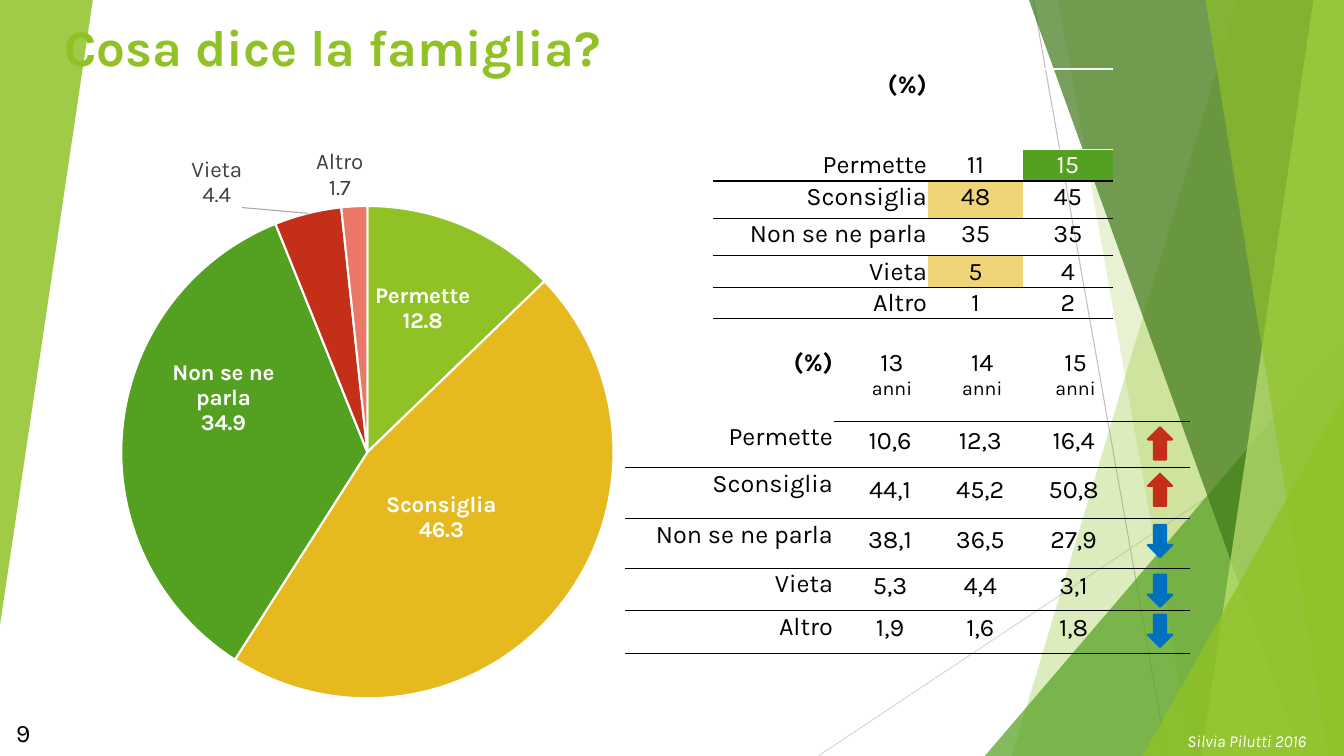
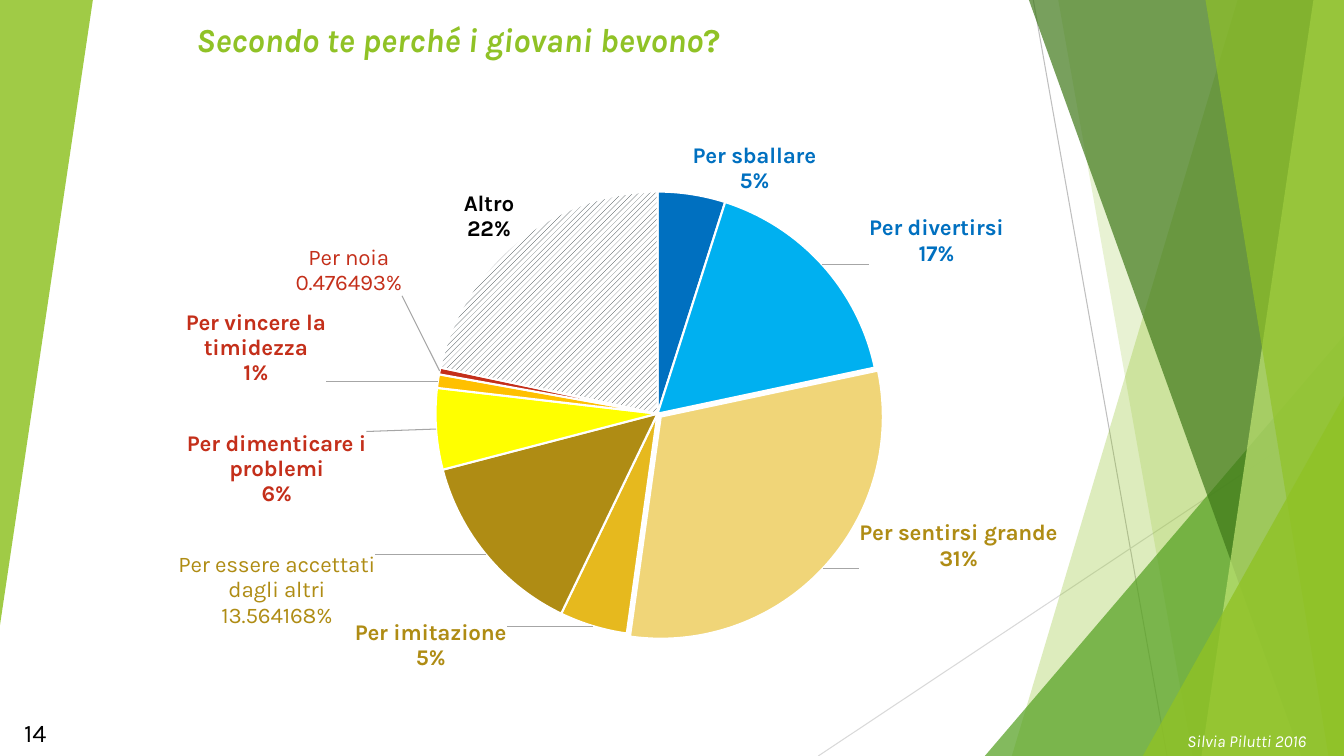
import lxml.etree
import pptx
import pptx.chart.data
import pptx.dml.color
import pptx.enum.chart
import pptx.enum.dml
import pptx.enum.shapes
import pptx.enum.text
import pptx.oxml.ns
import pptx.util

Cm = pptx.util.Cm
Pt = pptx.util.Pt
qn = pptx.oxml.ns.qn
ALIGN = pptx.enum.text.PP_ALIGN
ANCHOR = pptx.enum.text.MSO_ANCHOR
SHAPE = pptx.enum.shapes.MSO_SHAPE
SPOT = pptx.enum.chart.XL_LABEL_POSITION

WIDE, HIGH = 33.87, 19.05
FACE = "Karla"
LIME, GREEN, DARK, PALE = "90C226", "54A021", "3F7819", "C0E474"
GOLD, SAND, OCHRE = "E6B91E", "F0D578", "AF8C14"
RED, ROSE, BLUE, SKY = "C42F1A", "EB7766", "0070C0", "00B0F0"
BLACK, WHITE, GREY = "000000", "FFFFFF", "404040"
EDGE = {"margin_left": Cm(0.03), "margin_top": Cm(0.03),
        "margin_right": Cm(0.03), "margin_bottom": 0}
SNUG = {"margin_left": 0, "margin_top": 0, "margin_right": Cm(0.1),
        "margin_bottom": 0, "vertical_anchor": ANCHOR.MIDDLE}


def paint(code):
    return pptx.dml.color.RGBColor.from_string(code)


def put(item, form):
    for key, value in form.items():
        setattr(item, key, value)


def node(parent, tag, **attrs):
    return lxml.etree.SubElement(parent, qn(tag), attrs)


def style(font, size, tint=BLACK, **form):
    put(font, {"name": FACE, "size": Pt(size), **form})
    font.color.rgb = paint(tint)


def write(para, text, size, tint=BLACK, **form):
    run = para.add_run()
    run.text = text
    style(run.font, size, tint, **form)


def text(slide, box, parts, align=ALIGN.RIGHT, anchor=ANCHOR.BOTTOM):
    frame = slide.shapes.add_textbox(*map(Cm, box)).text_frame
    put(frame, {"word_wrap": True, "vertical_anchor": anchor})
    para = frame.paragraphs[0]
    para.alignment = align
    for words, size, tint, form in parts:
        write(para, words, size, tint, **form)


def coat(shape, tint, alpha):
    shape.shadow.inherit = False
    shape.fill.solid()
    shape.fill.fore_color.rgb = paint(tint)
    shape.line.fill.background()
    code = shape._element.spPr.find(qn("a:solidFill"))[0]
    node(code, "a:alpha", val=str(alpha * 1000))


def wedge(slide, top, foot, tint, alpha):
    pen = slide.shapes.build_freeform(Cm(top), 0, 1.0)
    ends = [(WIDE, 0), (WIDE, HIGH), (foot, HIGH)]
    pen.add_line_segments([(Cm(x), Cm(y)) for x, y in ends])
    coat(pen.convert_to_shape(), tint, alpha)


def corner(slide, box, tint, alpha, turn=0):
    shape = slide.shapes.add_shape(SHAPE.ISOSCELES_TRIANGLE, *map(Cm, box))
    shape.adjustments[0] = 1
    shape.rotation = turn
    coat(shape, tint, alpha)


def line(slide, ends, tint):
    kind = pptx.enum.shapes.MSO_CONNECTOR.STRAIGHT
    link = slide.shapes.add_connector(kind, *map(Cm, ends))
    link.line.color.rgb = paint(tint)
    link.line.width = Pt(0.75)
    node(link._element.spPr, "a:effectLst")


def decor(slide):
    line(slide, (26.04, 0, 29.41, HIGH), "BFBFBF")
    line(slide, (WIDE, 10.24, 20.62, HIGH), "D9D9D9")
    wedge(slide, 31.19, 25.5, LIME, 30)
    wedge(slide, 26.67, 30.05, LIME, 20)
    corner(slide, (24.82, 8.46, 9.05, 10.59), GREEN, 72)
    wedge(slide, 25.93, 32.79, DARK, 70)
    wedge(slide, 33.1, 30.28, PALE, 70)
    wedge(slide, 30.38, 33.48, LIME, 65)
    corner(slide, (28.8, 9.98, 5.07, 9.07), LIME, 80)
    corner(slide, (0, 0, 2.34, 15.75), LIME, 85, 180)


def footer(slide, number, width):
    name = [("Silvia Pilutti 2016", 12, WHITE, {"italic": True})]
    text(slide, (29.67, 18.29, 4.55, 0.76), name, ALIGN.LEFT, ANCHOR.TOP)
    page = [(str(number), 18, BLACK, {})]
    text(slide, (0, 17.94, width, 1.02), page, anchor=ANCHOR.MIDDLE)


def place(parent, spot, x, y, **size):
    layout = lxml.etree.Element(qn("c:layout"))
    manual = node(layout, "c:manualLayout")
    if size:
        node(manual, "c:layoutTarget", val="inner")
        node(manual, "c:xMode", val="edge")
        node(manual, "c:yMode", val="edge")
    for key, value in {"x": x, "y": y, **size}.items():
        node(manual, "c:" + key, val=str(value))
    parent.insert(spot, layout)


def label(point, look, shows):
    tint, bold, spot, shift, words = look
    tag = point.data_label
    if words:
        frame = tag.text_frame
        for row, part in enumerate(words):
            para = frame.add_paragraph() if row else frame.paragraphs[0]
            write(para, part, 16, tint, bold=bold)
    else:
        style(tag.font, 16, tint, bold=bold)
    tag.position = spot
    core = tag._dLbl
    place(core, 1, *shift)
    for key in ("showVal", "showCatName", "showPercent"):
        core.find(qn("c:" + key)).set("val", str(int(key in shows)))
    node(core, "c:separator").text = "\n"


def leader(tags):
    last = tags._element.find(qn("c:showLeaderLines"))
    lines = lxml.etree.Element(qn("c:leaderLines"))
    edge = node(node(lines, "c:spPr"), "a:ln", w="9525")
    node(node(edge, "a:solidFill"), "a:srgbClr", val="A6A6A6")
    last.addnext(lines)


def pie(slide, box, inner, slices, shows, form, burst=None):
    data = pptx.chart.data.CategoryChartData()
    data.categories = [part[0] for part in slices]
    data.add_series("Series 1", [part[1] for part in slices])
    kind = pptx.enum.chart.XL_CHART_TYPE.PIE
    chart = slide.shapes.add_chart(kind, *map(Cm, box), data).chart
    put(chart, {"has_legend": False, "has_title": False})
    style(chart.font, 10)
    plot = chart.plots[0]
    plot.vary_by_categories = True
    area = chart._chartSpace.chart.plotArea
    for old in area.findall(qn("c:layout")):
        area.remove(old)
    x, y, w, h = inner
    place(area, 0, x, y, w=w, h=h)
    ser = plot.series[0]
    tags = ser.data_labels
    put(tags, {"number_format": form, "number_format_is_linked": False,
               "show_value": "showVal" in shows, "show_category_name": True,
               "show_percentage": "showPercent" in shows})
    leader(tags)
    for spot, (name, value, tint, *look) in enumerate(slices):
        point = ser.points[spot]
        fill = point.format.fill
        if tint:
            fill.solid()
            fill.fore_color.rgb = paint(tint)
        else:
            fill.patterned()
            fill.pattern = pptx.enum.dml.MSO_PATTERN.WIDE_UPWARD_DIAGONAL
            fill.fore_color.rgb = paint("212D32")
            fill.back_color.rgb = paint(WHITE)
        point.format.line.color.rgb = paint(WHITE)
        point.format.line.width = Pt(1.5)
        label(point, look, shows)
    if burst is not None:
        mark = lxml.etree.Element(qn("c:explosion"), val="2")
        core = ser._element.findall(qn("c:dPt"))[burst]
        core.find(qn("c:spPr")).addprevious(mark)


def border(cell, **sides):
    props = cell._tc.get_or_add_tcPr()
    for spot, (side, tint) in enumerate(sides.items()):
        edge = lxml.etree.Element(qn("a:" + side), w="12700")
        node(node(edge, "a:solidFill"), "a:srgbClr", val=tint)
        props.insert(spot, edge)


def grid(slide, left, top, cols, rows, cells, fills, head, tight):
    size = (left, top, sum(cols), sum(rows))
    table = slide.shapes.add_table(len(rows), len(cols), *map(Cm, size)).table
    put(table, {"first_row": False, "horz_banding": False})
    table._tbl.tblPr[0].text = "{2D5ABB26-0587-4C30-8999-92F81FD0307C}"
    for col, width in zip(table.columns, cols):
        col.width = Cm(width)
    for row, height in zip(table.rows, rows):
        row.height = Cm(height)
    for r, words in enumerate(cells):
        for c, word in enumerate(words):
            cell = table.cell(r, c)
            snug = tight and r > 0 and c > 0
            put(cell, SNUG if snug else EDGE)
            tint = fills.get((r, c))
            if tint:
                cell.fill.solid()
                cell.fill.fore_color.rgb = paint(tint)
            else:
                cell.fill.background()
            for n, part in enumerate(word.split("\n")):
                frame = cell.text_frame
                para = frame.add_paragraph() if n else frame.paragraphs[0]
                para.alignment = ALIGN.CENTER if c else ALIGN.RIGHT
                if snug:
                    para.line_spacing = Pt(16)
                ink = WHITE if tint == GREEN else BLACK
                if part:
                    write(para, part, 14 if n else 18, ink, bold=r + c == 0)
            over = head[c] if r == 1 else BLACK
            under = BLACK if r else head[c]
            if r:
                border(cell, lnT=over, lnB=under)
            elif tight:
                border(cell, lnB=under)
            else:
                border(cell, lnT=WHITE, lnB=under)


def arrow(slide, top, up):
    kind, tint = (SHAPE.UP_ARROW, RED) if up else (SHAPE.DOWN_ARROW, BLUE)
    shape = slide.shapes.add_shape(kind, *map(Cm, (28.93, top, 0.61, 0.81)))
    shape.shadow.inherit = False
    shape.fill.solid()
    shape.fill.fore_color.rgb = paint(tint)
    shape.line.color.rgb = paint(tint)
    shape.line.width = Pt(1.5)


def family(slide):
    text(slide, (0.99, 0.3, 14.4, 1.75),
         [("Cosa dice la famiglia?", 36.5, LIME, {"bold": True})])
    mid, out = SPOT.CENTER, SPOT.OUTSIDE_END
    slices = [
        ("Permette", 12.8, LIME, WHITE, True, mid, (0.01, -0.05), None),
        ("Sconsiglia", 46.3, GOLD, WHITE, True, mid, (-0.03, -0.02), None),
        ("Non se ne parla", 34.9, GREEN, WHITE, True, mid, (-0.03, -0.07),
         ("Non se ne", "parla", "34.9")),
        ("Vieta", 4.4, RED, GREY, False, out, (-0.09, 0), None),
        ("Altro", 1.7, ROSE, GREY, False, out, (-0.02, 0), None),
    ]
    pie(slide, (0, 3.15, 17.98, 15.27), (0.17, 0.13, 0.69, 0.82),
        slices, ("showVal", "showCatName"), "0.0")
    names = [part[0] for part in slices]
    pairs = ["11 15", "48 45", "35 35", "5 4", "1 2"]
    cells = [["(%)", "", ""]]
    cells += [[name, *pair.split()] for name, pair in zip(names, pairs)]
    fills = {(1, 2): GREEN, (2, 1): SAND, (4, 1): SAND}
    grid(slide, 17.98, 1.74, (5.41, 2.39, 2.26),
         (2.03, 0.77, 0.94, 0.94, 0.77, 0.77), cells, fills, [WHITE] * 3, False)
    years = ["10,6 12,3 16,4", "44,1 45,2 50,8", "38,1 36,5 27,9",
             "5,3 4,4 3,1", "1,9 1,6 1,8"]
    cells = [["(%)", "13\nanni", "14\nanni", "15\nanni", ""]]
    cells += [[name, *trio.split(), ""] for name, trio in zip(names, years)]
    grid(slide, 15.76, 8.74, (5.26, 2.92, 1.63, 3.07, 1.35),
         (1.88, 1.17, 1.28, 1.25, 1.07, 1.07), cells, {},
         [WHITE] + [BLACK] * 4, True)
    for spot, top in enumerate((10.77, 11.94, 13.23, 14.48, 15.49)):
        arrow(slide, top, spot < 2)


def motive(slide):
    text(slide, (1.98, 0.28, 16.43, 1.35),
         [("Secondo te perché i giovani bevono", 24, LIME,
           {"bold": True, "italic": True}),
          ("?", 24, LIME, {"bold": True})])
    out = SPOT.OUTSIDE_END
    group, bored = "Per essere accettati dagli altri", "Per noia"
    slices = [
        ("Per sballare", 5, BLUE, BLUE, True, out, (0, 0.01), None),
        ("Per divertirsi", 17, SKY, BLUE, True, out, (0.04, 0.01), None),
        ("Per sentirsi grande", 31, SAND, OCHRE, True, out, (0.03, -0.09), None),
        ("Per imitazione", 5, GOLD, OCHRE, True, out, (-0.08, -0.02), None),
        (group, 14, OCHRE, OCHRE, False, out, (-0.1, -0.01),
         (group, "13.564168%")),
        ("Per dimenticare i problemi", 6, "FFFF00", RED, True, out,
         (-0.06, 0.07), None),
        ("Per vincere la timidezza", 1, "FFC000", RED, True, out,
         (-0.1, 0.01), None),
        (bored, 0.5, RED, RED, False, out, (-0.03, -0.13),
         (bored, "0.476493%")),
        ("Altro", 22, None, BLACK, True, out, (0, 0.01), None),
    ]
    pie(slide, (2.92, 3.25, 26.77, 14.35), (0.3, 0.11, 0.42, 0.78),
        slices, ("showCatName", "showPercent"), "0%", 2)


def main():
    deck = pptx.Presentation()
    put(deck, {"slide_width": Cm(WIDE), "slide_height": Cm(HIGH)})
    for build, number, width in ((family, 9, 1.02), (motive, 14, 1.42)):
        slide = deck.slides.add_slide(deck.slide_layouts[6])
        decor(slide)
        build(slide)
        footer(slide, number, width)
    deck.save("out.pptx")


if __name__ == "__main__":
    main()
